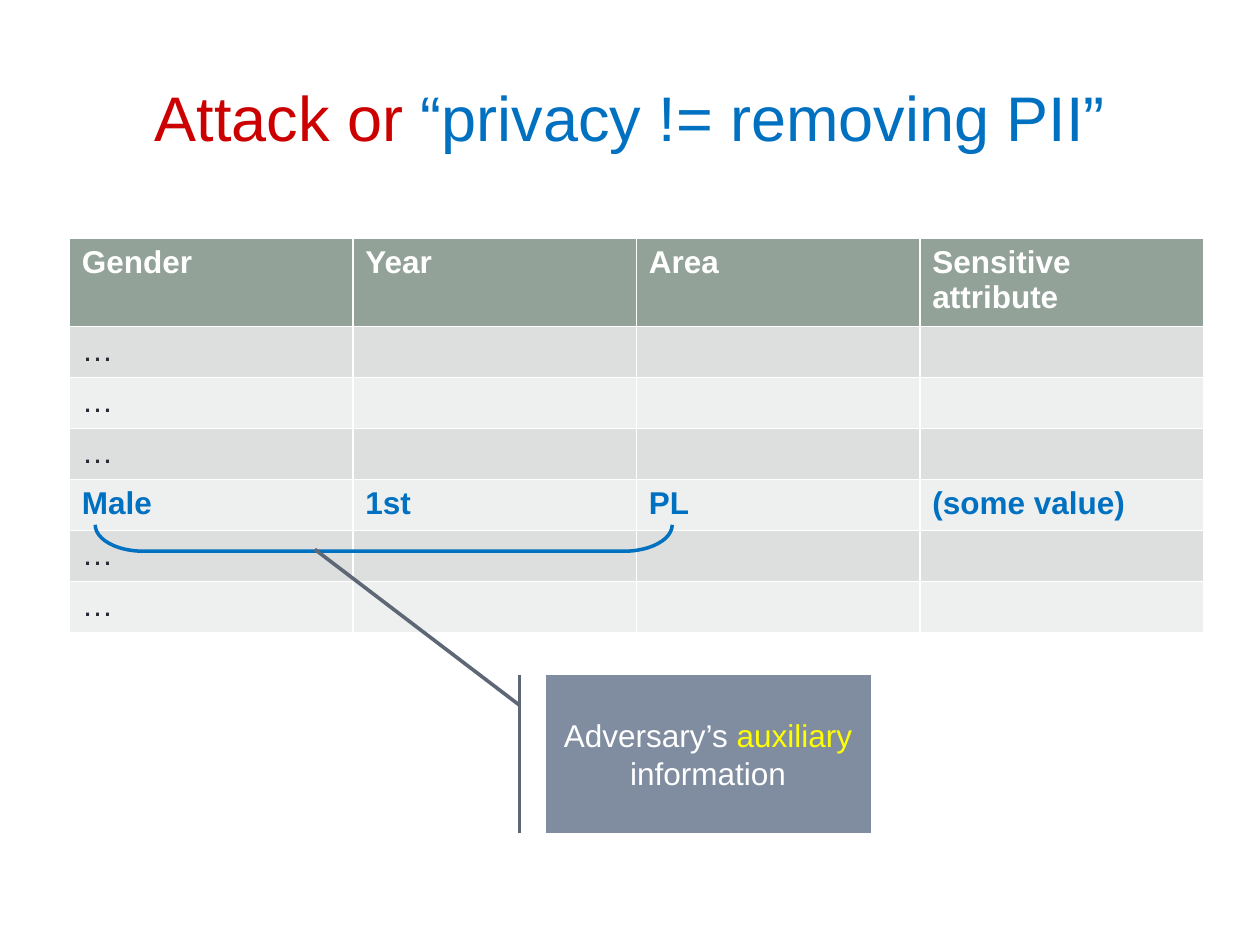
from pptx import Presentation
from pptx.dml.color import RGBColor as RGB
from pptx.enum.shapes import MSO_SHAPE as SHAPE
from pptx.enum.text import MSO_ANCHOR as ANCHOR, PP_ALIGN as ALIGN
from pptx.oxml.ns import qn
from pptx.util import Inches, Pt

RED = RGB(0xCC, 0x00, 0x00)
BLUE = RGB(0x00, 0x70, 0xC0)
WHITE = RGB(0xFF, 0xFF, 0xFF)
YELLOW = RGB(0xFF, 0xFF, 0x00)
INK = RGB(0x29, 0x29, 0x34)
SAGE = RGB(0x93, 0xA2, 0x99)
BANDS = RGB(0xDC, 0xDF, 0xDD), RGB(0xEE, 0xF0, 0xEF)
SLATE = RGB(0x80, 0x8D, 0xA0)
DARK_SLATE = RGB(0x5D, 0x67, 0x75)

HEADER = ["Gender", "Year", "Area", "Sensitive attribute"]
TARGET = ["Male", "1st", "PL", "(some value)"]
OTHER = ["…", "", "", ""]
ROWS = [HEADER, OTHER, OTHER, OTHER, TARGET, OTHER, OTHER]
WIDTH, HEIGHT = 10, 7.5
TABLE_H = 3.13
HEADER_H = 0.7
ROW_H = (TABLE_H - HEADER_H) / (len(ROWS) - 1)


class Deck:
    font = "Arial"

    def __init__(self, width, height):
        self.prs = Presentation()
        self.prs.slide_width, self.prs.slide_height = Inches(width), Inches(height)
        self.s = self.prs.slides.add_slide(self.prs.slide_layouts[5])

    def box(self, x, y, w, h):
        W, H = self.prs.slide_width, self.prs.slide_height
        return [round(v) for v in (x * W, y * H, w * W, h * H)]

    def add_text(self, tf, runs, size=18, bold=False, align=ALIGN.LEFT):
        p = tf.paragraphs[0]
        p.alignment = align
        for text, color in runs:
            r = p.add_run()
            r.text = text
            for name, value in dict(name=self.font, size=Pt(size), bold=bold).items():
                setattr(r.font, name, value)
            r.font.color.rgb = color

    def title(self, box, runs):
        sp = self.s.shapes.title
        sp.left, sp.top, sp.width, sp.height = self.box(*box)
        sp.text_frame.vertical_anchor = ANCHOR.MIDDLE
        self.add_text(sp.text_frame, runs, size=36, align=ALIGN.CENTER)

    def table(self, box, rows):
        table = self.s.shapes.add_table(len(rows), len(rows[0]), *self.box(*box)).table
        for i, row in enumerate(rows):
            table.rows[i].height = Inches(ROW_H if i else HEADER_H)
            fill = BANDS[(i - 1) % 2] if i else SAGE
            color = WHITE if i == 0 else BLUE if row is TARGET else INK
            for cell, text in zip(table.rows[i].cells, row):
                cell.fill.solid()
                cell.fill.fore_color.rgb = fill
                if text:
                    self.add_text(cell.text_frame, [(text, color)], bold=row is not OTHER)

    def shape(self, kind, box, line, width, adjust):
        sp = self.s.shapes.add_shape(kind, *self.box(*box))
        sp.shadow.inherit = False
        sp.line.color.rgb = line
        sp.line.width = Pt(width)
        for i, value in enumerate(adjust):
            sp.adjustments[i] = value
        return sp

    def bracket(self, box):
        sp = self.shape(SHAPE.RIGHT_BRACKET, box, BLUE, 2, [1.83])
        sp.fill.background()
        sp.rotation = 270
        sp.element.spPr.find(qn("a:xfrm")).set("flipH", "1")

    def callout(self, box, runs):
        sp = self.shape(SHAPE.LINE_CALLOUT_1_ACCENT_BAR, box, DARK_SLATE, 2.08,
                        [0.19, -0.08, -0.8, -0.71])
        sp.fill.solid()
        sp.fill.fore_color.rgb = SLATE
        tf = sp.text_frame
        for name, value in dict(word_wrap=True, vertical_anchor=ANCHOR.MIDDLE).items():
            setattr(tf, name, value)
        self.add_text(tf, runs, align=ALIGN.CENTER)


def main():
    deck = Deck(WIDTH, HEIGHT)
    deck.title((0.05, 0.04, 0.9, 1 / 6),
               [("Attack or ", RED), ("“privacy != removing PII”", BLUE)])
    deck.table((0.55 / WIDTH, 1.89 / HEIGHT, 0.9, TABLE_H / HEIGHT), ROWS)
    deck.bracket((2.94 / WIDTH, 1.98 / HEIGHT, 0.21 / WIDTH, 4.58 / HEIGHT))
    deck.callout((4.33 / WIDTH, 5.36 / HEIGHT, 2.58 / WIDTH, 1 / 6),
                 [("Adversary’s ", WHITE), ("auxiliary", YELLOW), (" information", WHITE)])
    deck.prs.save("out.pptx")


if __name__ == "__main__":
    main()
